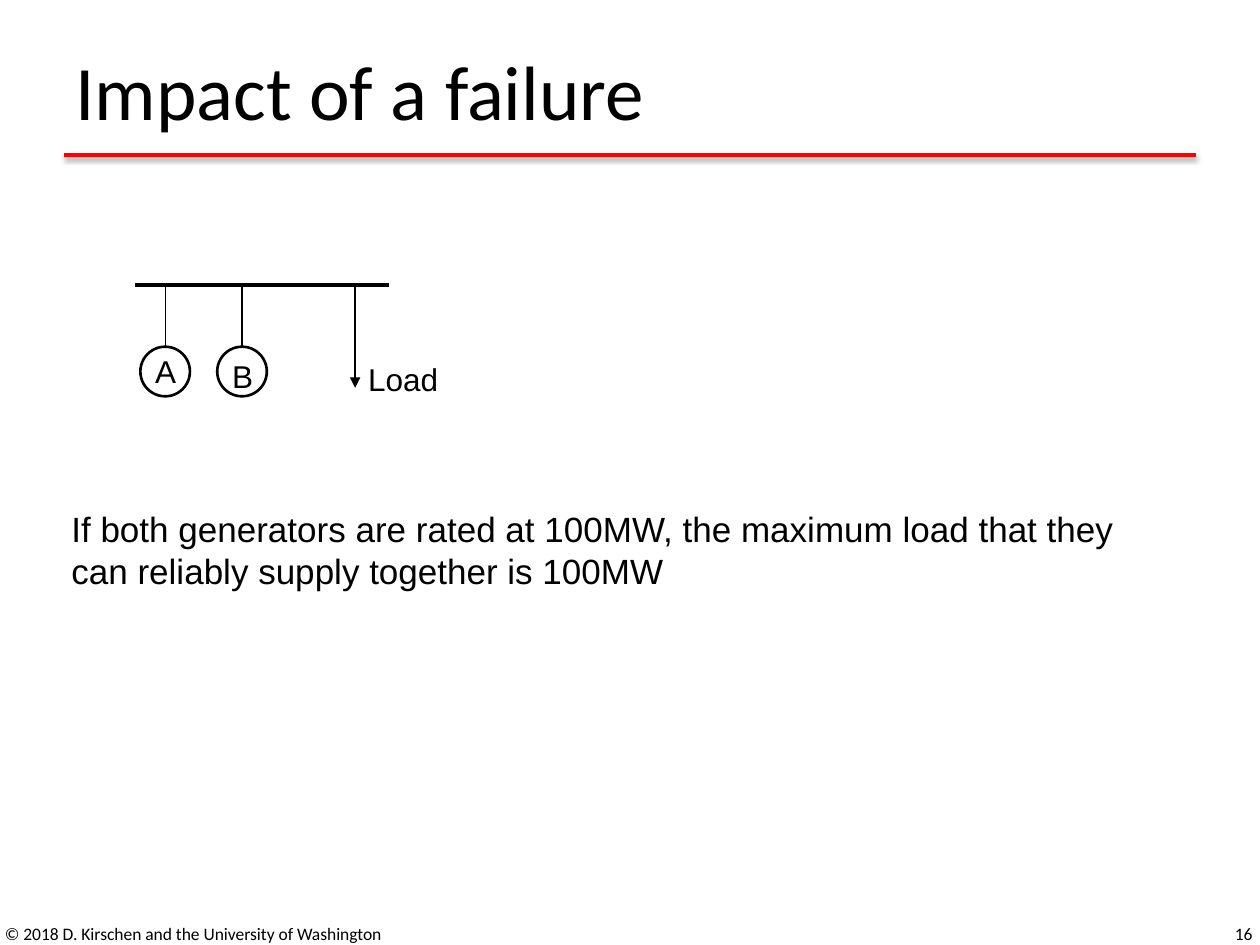
from dataclasses import dataclass

from lxml.etree import SubElement
from pptx import Presentation
from pptx.dml.color import RGBColor
from pptx.enum.shapes import MSO_CONNECTOR, MSO_SHAPE
from pptx.enum.text import MSO_ANCHOR, PP_ALIGN
from pptx.oxml.ns import qn
from pptx.util import Cm, Pt


@dataclass(frozen=True)
class Theme:
    ink: RGBColor = RGBColor(0, 0, 0)
    accent: RGBColor = RGBColor(0xFF, 0, 0)
    heading_font: str = "Calibri"
    body_font: str = "Arial"
    title_size: int = 44
    body_size: int = 20
    label_size: int = 18
    footer_size: int = 10


@dataclass(frozen=True)
class Caption:
    text: str
    left: float
    top: float
    width: float
    height: float
    size: int
    font: str
    inset: bool = True
    wrap: bool = True
    anchor: MSO_ANCHOR = MSO_ANCHOR.TOP
    align: PP_ALIGN = PP_ALIGN.LEFT


@dataclass(frozen=True)
class Generator:
    center_x: float
    letter: str
    letter_top: float


THEME = Theme()
BUS_Y = 5.74
BUS_LEFT, BUS_RIGHT = 2.72, 7.85
GENERATOR_TOP, GENERATOR_SIZE = 6.99, 1.0
LETTER_SIZE, LETTER_OFFSET = 0.71, -0.2
GENERATORS = [Generator(3.33, "A", 7.09), Generator(4.88, "B", 7.19)]
LOAD_START_X, LOAD_X, LOAD_END_Y = 6.48, 7.16, 7.82
FOOTER = {
    "top": 18.31, "height": 1.02, "size": THEME.footer_size,
    "font": THEME.heading_font, "anchor": MSO_ANCHOR.MIDDLE,
}
LABEL = {"height": LETTER_SIZE, "size": THEME.label_size, "font": THEME.body_font, "inset": False}
CAPTIONS = [
    Caption("© 2018 D. Kirschen and the University of Washington", left=-0.15, width=9.86, **FOOTER),
    Caption("16", left=19.58, width=5.92, align=PP_ALIGN.RIGHT, **FOOTER),
    Caption("Load", left=7.42, top=7.26, width=2.29, **LABEL),
    Caption(
        "If both generators are rated at 100MW, the maximum load that they\v"
        "can reliably supply together is 100MW",
        1.19, 10.11, 21.64, 1.96, THEME.body_size, THEME.body_font, wrap=False,
    ),
]


def write_caption(shape, caption: Caption) -> None:
    """Place a text shape and give it the caption's wording and format."""
    for side in ("left", "top", "width", "height"):
        setattr(shape, side, Cm(getattr(caption, side)))
    frame = shape.text_frame
    frame.text = caption.text
    settings = {"word_wrap": caption.wrap, "vertical_anchor": caption.anchor}
    if not caption.inset:
        settings |= {f"margin_{side}": 0 for side in ("left", "top", "right", "bottom")}
    for name, value in settings.items():
        setattr(frame, name, value)
    paragraph = frame.paragraphs[0]
    paragraph.alignment = caption.align
    for run in paragraph.runs:
        for name, value in {"name": caption.font, "size": Pt(caption.size)}.items():
            setattr(run.font, name, value)
        run.font.color.rgb = THEME.ink


def add_caption(slide, caption: Caption) -> None:
    write_caption(slide.shapes.add_textbox(0, 0, 0, 0), caption)


def style_line(shape, weight: float, color: RGBColor = THEME.ink) -> None:
    shape.line.color.rgb = color
    shape.line.width = Pt(weight)


def add_line(slide, x1: float, y1: float, x2: float, y2: float,
             weight: float, color: RGBColor = THEME.ink):
    """Draw a straight line and return it with its empty effect list."""
    line = slide.shapes.add_connector(MSO_CONNECTOR.STRAIGHT, Cm(x1), Cm(y1), Cm(x2), Cm(y2))
    style_line(line, weight, color)
    effects = SubElement(line._element.spPr, qn("a:effectLst"))
    return line, effects


def add_title_rule(slide) -> None:
    _, effects = add_line(slide, 1.3, 3.12, 24.1, 3.12, 2, THEME.accent)
    shadow = SubElement(effects, qn("a:outerShdw"), blurRad=str(Pt(3.1)), dist=str(Pt(1.6)),
                        dir="5400000", rotWithShape="0")
    shade = SubElement(shadow, qn("a:srgbClr"), val=str(THEME.ink))
    SubElement(shade, qn("a:alpha"), val="38000")


def add_load_arrow(slide) -> None:
    builder = slide.shapes.build_freeform(Cm(LOAD_START_X), Cm(BUS_Y))
    builder.add_line_segments(
        [(Cm(LOAD_X), Cm(BUS_Y)), (Cm(LOAD_X), Cm(LOAD_END_Y))], close=False)
    arrow = builder.convert_to_shape()
    arrow.fill.background()
    arrow.shadow.inherit = False
    style_line(arrow, 0.75)
    SubElement(arrow.line._get_or_add_ln(), qn("a:tailEnd"), type="triangle")


def add_generator(slide, generator: Generator) -> None:
    """Draw a lettered circle and its link up to the bus."""
    x = generator.center_x
    circle = slide.shapes.add_shape(
        MSO_SHAPE.OVAL, Cm(x - GENERATOR_SIZE / 2), Cm(GENERATOR_TOP),
        Cm(GENERATOR_SIZE), Cm(GENERATOR_SIZE))
    circle.fill.background()
    circle.shadow.inherit = False
    style_line(circle, 1.5)
    link, _ = add_line(slide, x, GENERATOR_TOP, x, BUS_Y, 0.75)
    link.begin_connect(circle, 0)
    add_caption(slide, Caption(generator.letter, left=x + LETTER_OFFSET,
                               top=generator.letter_top, width=LETTER_SIZE, **LABEL))


def main() -> None:
    deck = Presentation()
    deck.slide_width, deck.slide_height = Cm(25.4), Cm(19.05)
    slide = deck.slides.add_slide(deck.slide_layouts[5])
    write_caption(slide.shapes.title, Caption(
        "Impact of a failure", 1.27, 0.33, 22.86, 2.97,
        THEME.title_size, THEME.heading_font, anchor=MSO_ANCHOR.MIDDLE))
    add_title_rule(slide)
    add_line(slide, BUS_RIGHT, BUS_Y, BUS_LEFT, BUS_Y, 2.25)
    add_load_arrow(slide)
    for generator in GENERATORS:
        add_generator(slide, generator)
    for caption in CAPTIONS:
        add_caption(slide, caption)
    deck.save("out.pptx")


if __name__ == "__main__":
    main()
